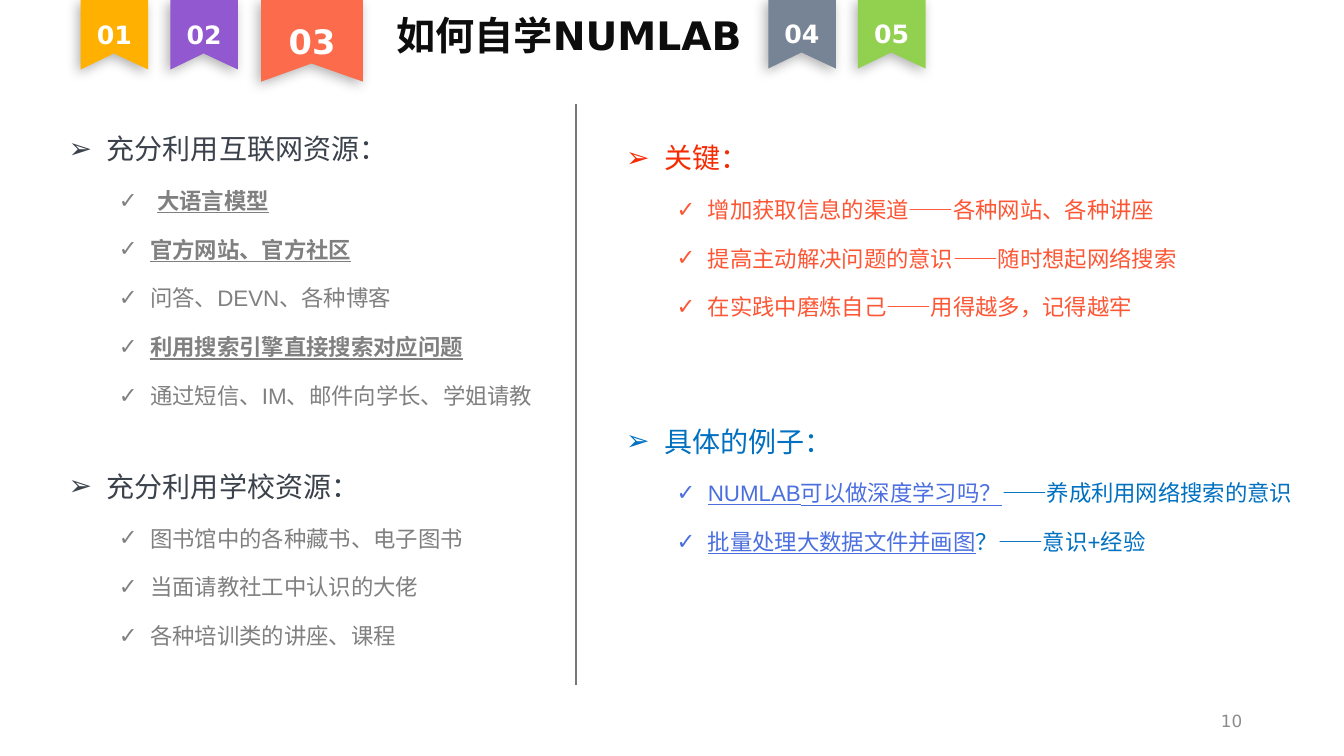
from typing import NamedTuple

from lxml.etree import SubElement
from pptx import Presentation
from pptx.dml.color import RGBColor
from pptx.enum.shapes import MSO_CONNECTOR
from pptx.enum.text import MSO_ANCHOR, MSO_AUTO_SIZE, PP_ALIGN
from pptx.oxml.ns import qn
from pptx.util import Pt

PX = 9144
HEADING_FONT = "DejaVu Sans"
LIST_FONT = "Arial"

WHITE = RGBColor(0xFF, 0xFF, 0xFF)
INK = RGBColor(0x0D, 0x0D, 0x0D)
PAGE_GRAY = RGBColor(0x8C, 0x8C, 0x8C)
DIVIDER_GRAY = RGBColor(0x78, 0x78, 0x78)
SLATE = RGBColor(0x3B, 0x42, 0x4B)
GRAY = RGBColor(0x80, 0x80, 0x80)
RED = RGBColor(0xF5, 0x2C, 0x03)
CORAL_TEXT = RGBColor(0xFD, 0x56, 0x35)
BLUE = RGBColor(0x00, 0x70, 0xC0)
LINK_BLUE = RGBColor(0x4B, 0x6F, 0xDE)
AMBER = RGBColor(0xFF, 0xB0, 0x00)
PURPLE = RGBColor(0x91, 0x58, 0xD0)
CORAL = RGBColor(0xFD, 0x6B, 0x4D)
STEEL = RGBColor(0x77, 0x84, 0x95)
GREEN = RGBColor(0x92, 0xD0, 0x50)


class Piece(NamedTuple):
    text: str
    color: RGBColor
    bold: bool = False
    underline: bool = False


class Page:
    def __init__(self, presentation):
        self.slide = presentation.slides.add_slide(presentation.slide_layouts[4])
        self.shapes = self.slide.shapes

    def place(self, shape, left, top, width, height):
        shape.left, shape.top = left * PX, top * PX
        shape.width, shape.height = width * PX, height * PX
        frame = shape.text_frame
        frame.auto_size = MSO_AUTO_SIZE.NONE
        frame.word_wrap = True
        frame.vertical_anchor = MSO_ANCHOR.TOP
        return frame

    def style(self, run, font, size, color, bold=False, underline=False):
        run.font.name = font
        run.font.size = Pt(size)
        run.font.color.rgb = color
        run.font.bold = bold
        run.font.underline = underline

    def line_of_text(self, frame, text, size, color, align, bold=True):
        frame.text = text
        paragraph = frame.paragraphs[0]
        paragraph.alignment = align
        self.style(paragraph.runs[0], HEADING_FONT, size, color, bold)

    def title(self, text, box):
        frame = self.place(self.shapes.title, *box)
        self.line_of_text(frame, text, 28, INK, PP_ALIGN.LEFT)

    def page_number(self, text, box):
        frame = self.place(self.shapes.add_textbox(0, 0, 0, 0), *box)
        frame.vertical_anchor = MSO_ANCHOR.MIDDLE
        self.line_of_text(frame, text, 12, PAGE_GRAY, PP_ALIGN.RIGHT, bold=False)

    def ribbon(self, number, left, top, color, width=67, height=69, notch=16, size=18):
        right, bottom = left + width, top + height
        builder = self.shapes.build_freeform(left, top, scale=PX)
        builder.add_line_segments(
            [(right, top), (right, bottom),
             (left + width // 2, bottom - notch), (left, bottom)], close=True)
        shape = builder.convert_to_shape()
        shape.fill.solid()
        shape.fill.fore_color.rgb = color
        shape.line.fill.background()
        self.cast_shadow(shape)
        shape.text_frame.vertical_anchor = MSO_ANCHOR.MIDDLE
        self.line_of_text(shape.text_frame, number, size, WHITE, PP_ALIGN.CENTER)

    def cast_shadow(self, shape):
        shape.shadow.inherit = False
        effects = shape._element.spPr.find(qn("a:effectLst"))
        shadow = SubElement(effects, qn("a:outerShdw"), blurRad=str(Pt(9)),
                            dist=str(Pt(3)), dir="8100000", algn="tr", rotWithShape="0")
        tint = SubElement(shadow, qn("a:srgbClr"), val="000000")
        SubElement(tint, qn("a:alpha"), val="30000")

    def bullet(self, paragraph, mark, margin, hanging):
        properties = paragraph._p.get_or_add_pPr()
        properties.set("marL", str(margin * PX))
        properties.set("indent", str(-hanging * PX))
        SubElement(properties, qn("a:buFont"), typeface=LIST_FONT)
        SubElement(properties, qn("a:buChar"), char=mark)

    def topic(self, index, box, heading, items, first_hanging=31):
        frame = self.place(self.slide.placeholders[index], *box)
        for row, pieces in enumerate([[heading], *items]):
            paragraph = frame.add_paragraph() if row else frame.paragraphs[0]
            if row:
                hanging = first_hanging if row == 1 else 31
                paragraph.level = 1
                self.bullet(paragraph, "✓", 50 + hanging, hanging)
            else:
                self.bullet(paragraph, "➢", 38, 38)
            paragraph.line_spacing = 1.5
            paragraph.space_before = Pt(6 if row else 0)
            for piece in pieces:
                run = paragraph.add_run()
                run.text = piece.text
                self.style(run, LIST_FONT, 16 if row else 20, *piece[1:])

    def divider(self, x, top, bottom):
        line = self.shapes.add_connector(
            MSO_CONNECTOR.STRAIGHT, x * PX, top * PX, x * PX, bottom * PX)
        line.line.color.rgb = DIVIDER_GRAY
        line.line.width = Pt(1.5)
        SubElement(line._element.spPr, qn("a:effectLst"))


def main():
    presentation = Presentation()
    presentation.slide_width = 1333 * PX
    presentation.slide_height = 750 * PX
    page = Page(presentation)

    page.title("如何自学NUMLAB", (383, 6, 444, 57))
    page.ribbon("01", 80, 0, AMBER)
    page.ribbon("02", 169, 0, PURPLE)
    page.ribbon("03", 259, 0, CORAL, width=101, height=81, notch=18, size=24)
    page.ribbon("04", 762, -1, STEEL)
    page.ribbon("05", 851, -1, GREEN)

    page.topic(1, (58, 109, 530, 310), Piece("充分利用互联网资源：", SLATE), [
        [Piece("大语言模型", GRAY, True, True)],
        [Piece("官方网站、官方社区", GRAY, True, True)],
        [Piece("问答、DEVN、各种博客", GRAY)],
        [Piece("利用搜索引擎直接搜索对应问题", GRAY, True, True)],
        [Piece("通过短信、IM、邮件向学长、学姐请教", GRAY)],
    ], first_hanging=38)
    page.topic(2, (58, 444, 520, 202), Piece("充分利用学校资源：", SLATE), [
        [Piece("图书馆中的各种藏书、电子图书", GRAY)],
        [Piece("当面请教社工中认识的大佬", GRAY)],
        [Piece("各种培训类的讲座、课程", GRAY)],
    ])
    page.topic(3, (611, 118, 586, 202), Piece("关键：", RED), [
        [Piece("增加获取信息的渠道——各种网站、各种讲座", CORAL_TEXT)],
        [Piece("提高主动解决问题的意识——随时想起网络搜索", CORAL_TEXT)],
        [Piece("在实践中磨炼自己——用得越多，记得越牢", CORAL_TEXT)],
    ])
    page.topic(4, (611, 399, 704, 153), Piece("具体的例子：", BLUE), [
        [Piece("NUMLAB可以做深度学习吗？", LINK_BLUE, underline=True),
         Piece("——养成利用网络搜索的意识", BLUE)],
        [Piece("批量处理大数据文件并画图", LINK_BLUE, underline=True),
         Piece("？——意识+经验", BLUE)],
    ])

    page.divider(571, 103, 680)
    page.page_number("10", (942, 695, 300, 40))
    presentation.save("out.pptx")


if __name__ == "__main__":
    main()
